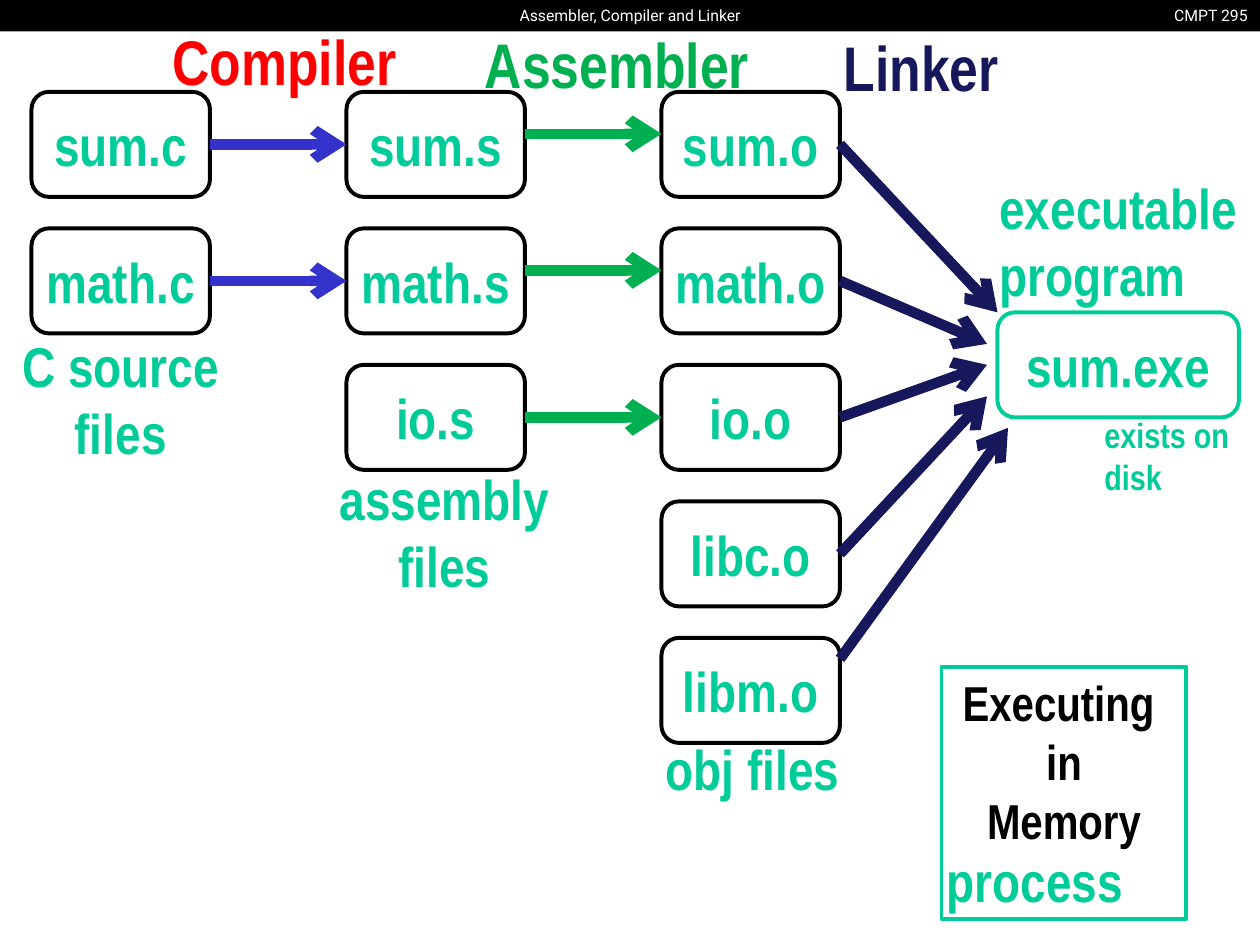
from lxml import etree
from pptx import Presentation
from pptx.dml.color import RGBColor
from pptx.enum.shapes import MSO_CONNECTOR, MSO_SHAPE
from pptx.enum.text import MSO_ANCHOR, PP_ALIGN
from pptx.oxml.ns import qn
from pptx.util import Pt

RECT, ROUNDED = MSO_SHAPE.RECTANGLE, MSO_SHAPE.ROUNDED_RECTANGLE
STRAIGHT = MSO_CONNECTOR.STRAIGHT
LEFT, CENTER, RIGHT = PP_ALIGN.LEFT, PP_ALIGN.CENTER, PP_ALIGN.RIGHT
TOP, MIDDLE = MSO_ANCHOR.TOP, MSO_ANCHOR.MIDDLE
LEFT_SIDE, RIGHT_SIDE = 1, 3

COLORS = {
    "black": "000000", "white": "FFFFFF", "teal": "00CC99", "red": "FF0000",
    "green": "00B050", "blue": "3333CC", "navy": "17175C",
}
NARROW, ROBOTO = "Arial Narrow", "Roboto"

# Grid of file boxes, in points
FILE_W, FILE_H, ROW_STEP, COLUMN_STEP = 102, 60, 78, 180
GRID_X, GRID_Y = 18, 52.5


def rgb(name):
    return RGBColor.from_string(COLORS[name])


def write(shape, lines, size, color, align=LEFT, font=NARROW, bold=True, anchor=TOP):
    frame = shape.text_frame
    frame.word_wrap = True
    frame.vertical_anchor = anchor
    for i, line in enumerate(lines):
        paragraph = frame.paragraphs[0] if i == 0 else frame.add_paragraph()
        paragraph.alignment = align
        run = paragraph.add_run()
        run.text = line
        run.font.name, run.font.size, run.font.bold = font, Pt(size), bold
        run.font.color.rgb = rgb(color)


def add_label(slide, box, lines, size=32, color="teal", **style):
    label = slide.shapes.add_textbox(*map(Pt, box))
    write(label, lines, size, color, **style)


def add_outline(slide, kind, box, color):
    outline = slide.shapes.add_shape(kind, *map(Pt, box))
    outline.shadow.inherit = False
    outline.fill.background()
    outline.line.color.rgb = rgb(color)
    outline.line.width = Pt(2.25)
    return outline


def add_file(slide, box, name, color="black"):
    file_box = add_outline(slide, ROUNDED, box, color)
    frame = file_box.text_frame
    frame.margin_left = frame.margin_right = frame.margin_top = frame.margin_bottom = 0
    write(file_box, [name], 32, "teal", align=CENTER, anchor=MIDDLE)
    return file_box


def add_arrow(slide, start, end, color):
    arrow = slide.shapes.add_connector(STRAIGHT, *map(Pt, (*start, *end)))
    arrow.line.color.rgb = rgb(color)
    arrow.line.width = Pt(6)
    etree.SubElement(arrow.line._get_or_add_ln(), qn("a:tailEnd"), type="arrow")
    etree.SubElement(arrow._element.spPr, qn("a:effectLst"))
    return arrow


def add_header(slide, x, y, width, height):
    bar = slide.shapes.add_shape(RECT, Pt(x), Pt(y), Pt(width), Pt(height))
    bar.shadow.inherit = False
    bar.fill.solid()
    bar.fill.fore_color.rgb = rgb("black")
    bar.line.fill.background()
    style = {"size": 9, "color": "white", "font": ROBOTO, "bold": False}
    add_label(slide, (x + width - 70, y, 70, height), ["CMPT 295"], align=RIGHT, **style)
    add_label(slide, (x + width / 2 - 80, y, 160, height),
              ["Assembler, Compiler and Linker"], align=CENTER, **style)


def add_file_column(slide, x, y, names):
    return [add_file(slide, (x, y + row * ROW_STEP, FILE_W, FILE_H), name)
            for row, name in enumerate(names)]


def add_translation(slide, x, y, sources, results, color, offsets):
    """Arrows from each source file to its result; x, y is the sources' top left."""
    for row, (source, result, offset) in enumerate(zip(sources, results, offsets)):
        middle = y + row * ROW_STEP + FILE_H / 2 + offset
        arrow = add_arrow(slide, (x + FILE_W, middle), (x + COLUMN_STEP, middle), color)
        if offset == 0:
            arrow.begin_connect(source, RIGHT_SIDE)
            arrow.end_connect(result, LEFT_SIDE)


def add_linking(slide, x, y, objects, exe_box):
    """Arrows from the object files to the executable; x, y is the objects' top left."""
    exe_x, exe_y, _, exe_h = exe_box
    add_file(slide, exe_box, "sum.exe", "teal")
    # Arrow tips relative to the executable's top left
    tips = [(0, 0), (-6, 18), (-6, 30), (-6, exe_h - 12), (6, exe_h + 6)]
    offsets = [0, 0, 0, 0, -18]
    for row, (obj, (dx, dy), offset) in enumerate(zip(objects, tips, offsets)):
        start = (x + FILE_W, y + row * ROW_STEP + FILE_H / 2 + offset)
        arrow = add_arrow(slide, start, (exe_x + dx, exe_y + dy), "navy")
        if offset == 0:
            arrow.begin_connect(obj, RIGHT_SIDE)
    add_label(slide, (exe_x - 6, exe_y - 83, 171, 85), ["executable", "program"])
    add_label(slide, (exe_x + 54, exe_y + 54, 100, 55), ["exists on", "disk"], size=20)


def add_process(slide, x, y, width, height):
    memory = add_outline(slide, RECT, (x, y, width, height), "teal")
    write(memory, ["Executing ", "in", "Memory"], 28, "black", align=CENTER)
    add_label(slide, (x - 4, y + 99, 127, 46), ["process"])


def main():
    deck = Presentation()
    deck.slide_width, deck.slide_height = Pt(720), Pt(540)
    slide = deck.slides.add_slide(deck.slide_layouts[6])
    add_header(slide, 0, 0, 720, 18)

    # File columns
    source_x, assembly_x, object_x = (GRID_X + i * COLUMN_STEP for i in range(3))
    sources = add_file_column(slide, source_x, GRID_Y, ["sum.c", "math.c"])
    assemblies = add_file_column(slide, assembly_x, GRID_Y, ["sum.s", "math.s", "io.s"])
    objects = add_file_column(slide, object_x, GRID_Y,
                              ["sum.o", "math.o", "io.o", "libc.o", "libm.o"])

    # Build steps
    add_translation(slide, source_x, GRID_Y, sources, assemblies, "blue", [0, 0])
    add_translation(slide, assembly_x, GRID_Y, assemblies, objects, "green", [-6, -6, 0])
    add_linking(slide, object_x, GRID_Y, objects, (570, 178.5, 138, 60))

    # Step headings
    for x, y, width, step, color in [(91.5, 9.5, 160, "Compiler", "red"),
                                     (270, 11, 186, "Assembler", "green"),
                                     (475, 12.5, 114, "Linker", "navy")]:
        add_label(slide, (x, y, width, 51), [step], size=36, color=color)

    # Column captions
    add_label(slide, (-3, 186, 144, 85), ["C source", "files"], align=CENTER)
    add_label(slide, (178.5, 262, 151, 85), ["assembly", "files"], align=CENTER)
    add_label(slide, (373.5, 416, 124, 46), ["obj files"])

    add_process(slide, 538, 381, 140, 144)
    deck.save("out.pptx")


if __name__ == "__main__":
    main()
